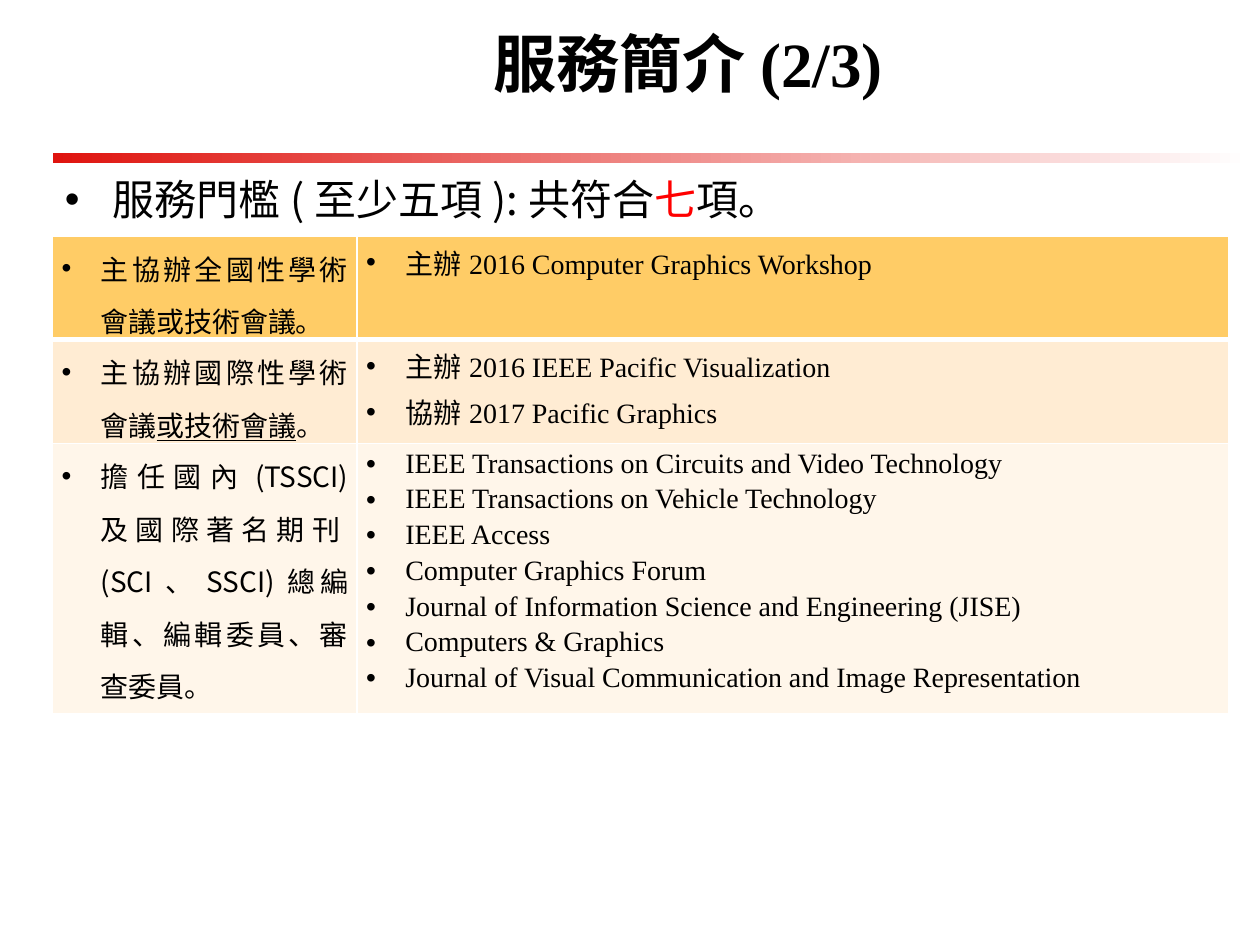
from dataclasses import dataclass

import lxml.etree
import pptx
import pptx.dml.color
import pptx.enum.shapes
import pptx.enum.text
import pptx.oxml.ns
import pptx.util

COLORS = {
    "black": "000000",
    "white": "FFFFFF",
    "red": "FF0000",
    "bar": "DF140F",
    "header": "FFCC66",
    "band": "FFECD3",
    "light": "FFF6EA",
}
SANS = "Noto Sans CJK SC"
SERIF = "Times New Roman"
ALIGN = pptx.enum.text.PP_ALIGN
MIDDLE = pptx.enum.text.MSO_ANCHOR.MIDDLE
Cm = pptx.util.Cm
Pt = pptx.util.Pt


@dataclass
class TextRun:
    text: str
    font: str = SANS
    size: float = 16
    color: str = "black"
    bold: bool = False
    underline: bool = False


@dataclass
class ServiceRow:
    criterion: list[TextRun]
    records: list[str]
    fill: str
    height: float
    top_border: float = 1
    bottom_border: float = 1


ROWS = [
    ServiceRow(
        [TextRun("主協辦全國性學術會議或技術會議。")],
        ["主辦2016 Computer Graphics Workshop"],
        "header", 2.08, bottom_border=3,
    ),
    ServiceRow(
        [TextRun("主協辦國際性學術會議"), TextRun("或技術會議", underline=True), TextRun("。")],
        ["主辦2016 IEEE Pacific Visualization", "協辦2017 Pacific Graphics"],
        "band", 2.1, top_border=3,
    ),
    ServiceRow(
        [TextRun("擔任國內(TSSCI) 及國際著名期刊(SCI、SSCI)總編輯、編輯委員、審查委員。")],
        [
            "IEEE Transactions on Circuits and Video Technology",
            "IEEE Transactions on Vehicle Technology",
            "IEEE Access",
            "Computer Graphics Forum",
            "Journal of Information Science and Engineering (JISE)",
            "Computers & Graphics",
            "Journal of Visual Communication and Image Representation",
        ],
        "light", 5.28,
    ),
]


def rgb(name: str) -> pptx.dml.color.RGBColor:
    return pptx.dml.color.RGBColor.from_string(COLORS[name])


def add_element(parent, tag: str, **attributes: str):
    element = lxml.etree.SubElement(parent, pptx.oxml.ns.qn(tag))
    for key, value in attributes.items():
        element.set(key, value)
    return element


def add_runs(paragraph, runs: list[TextRun]) -> None:
    for item in runs:
        run = paragraph.add_run()
        run.text = item.text
        run.font.size = Pt(item.size)
        run.font.bold = item.bold
        run.font.underline = item.underline
        run.font.color.rgb = rgb(item.color)
        run.font.name = item.font
        add_element(run.font._element, "a:ea", typeface=SANS)


def add_bullet(paragraph, indent: float) -> None:
    properties = paragraph._p.get_or_add_pPr()
    properties.set("marL", str(Cm(indent)))
    properties.set("indent", str(-Cm(indent)))
    add_element(properties, "a:buFont", typeface="Arial")
    add_element(properties, "a:buChar", char="•")


def fill_cell(cell, paragraphs: list[list[TextRun]], spacing: float, align, row: ServiceRow) -> None:
    cell.margin_left = cell.margin_right = Cm(0.18)
    cell.margin_top = cell.margin_bottom = 0
    frame = cell.text_frame
    for index, runs in enumerate(paragraphs):
        paragraph = frame.add_paragraph() if index else frame.paragraphs[0]
        paragraph.alignment = align
        paragraph.line_spacing = spacing
        add_bullet(paragraph, 0.79)
        add_runs(paragraph, runs)
    borders = {"L": 1, "R": 1, "T": row.top_border, "B": row.bottom_border}
    for side, width in borders.items():
        line = add_element(cell._tc.get_or_add_tcPr(), f"a:ln{side}", w=str(Pt(width)))
        add_element(add_element(line, "a:solidFill"), "a:srgbClr", val=COLORS["white"])
    cell.fill.solid()
    cell.fill.fore_color.rgb = rgb(row.fill)


def add_bar(slide) -> None:
    bar = slide.shapes.add_shape(
        pptx.enum.shapes.MSO_SHAPE.RECTANGLE, Cm(1.06), Cm(3.08), Cm(24.13), Cm(0.2))
    bar.shadow.inherit = False
    bar.line.fill.background()
    bar.fill.gradient()
    bar.fill.gradient_angle = 0
    for stop, position, color in zip(bar.fill.gradient_stops, (0, 1), ("bar", "white")):
        stop.position = position
        stop.color.rgb = rgb(color)


def add_title(slide) -> None:
    title = slide.shapes.title
    title.left, title.top, title.width, title.height = Cm(2.97), Cm(0.2), Cm(21.8), Cm(2.12)
    title.text_frame.vertical_anchor = MIDDLE
    paragraph = title.text_frame.paragraphs[0]
    paragraph.alignment = ALIGN.CENTER
    add_runs(paragraph, [
        TextRun("服務簡介", size=36, bold=True),
        TextRun("(2/3)", font=SERIF, size=36, bold=True),
    ])


def add_threshold(slide) -> None:
    box = slide.shapes.add_textbox(Cm(1.06), Cm(3.38), Cm(23.7), Cm(1.27))
    box.text_frame.word_wrap = True
    box.text_frame.vertical_anchor = MIDDLE
    paragraph = box.text_frame.paragraphs[0]
    add_bullet(paragraph, 0.95)
    add_runs(paragraph, [
        TextRun("服務門檻(至少五項):共符合", size=24),
        TextRun("七", size=24, color="red"),
        TextRun("項。", size=24),
    ])


def add_service_table(slide) -> None:
    height = sum(row.height for row in ROWS)
    table = slide.shapes.add_table(
        len(ROWS), 2, Cm(1.06), Cm(4.76), Cm(23.72), Cm(height)).table
    table.first_row = table.horz_banding = False
    for column, width in zip(table.columns, (6.14, 17.58)):
        column.width = Cm(width)
    for index, row in enumerate(ROWS):
        table.rows[index].height = Cm(row.height)
        records = [[TextRun(record, font=SERIF)] for record in row.records]
        fill_cell(table.cell(index, 0), [row.criterion], 1.3, ALIGN.JUSTIFY, row)
        fill_cell(table.cell(index, 1), records, 1.15, ALIGN.LEFT, row)


def main() -> None:
    presentation = pptx.Presentation()
    presentation.slide_width, presentation.slide_height = Cm(25.4), Cm(19.05)
    slide = presentation.slides.add_slide(presentation.slide_layouts.get_by_name("Title Only"))
    add_bar(slide)
    add_title(slide)
    add_threshold(slide)
    add_service_table(slide)
    presentation.save("out.pptx")


if __name__ == "__main__":
    main()
